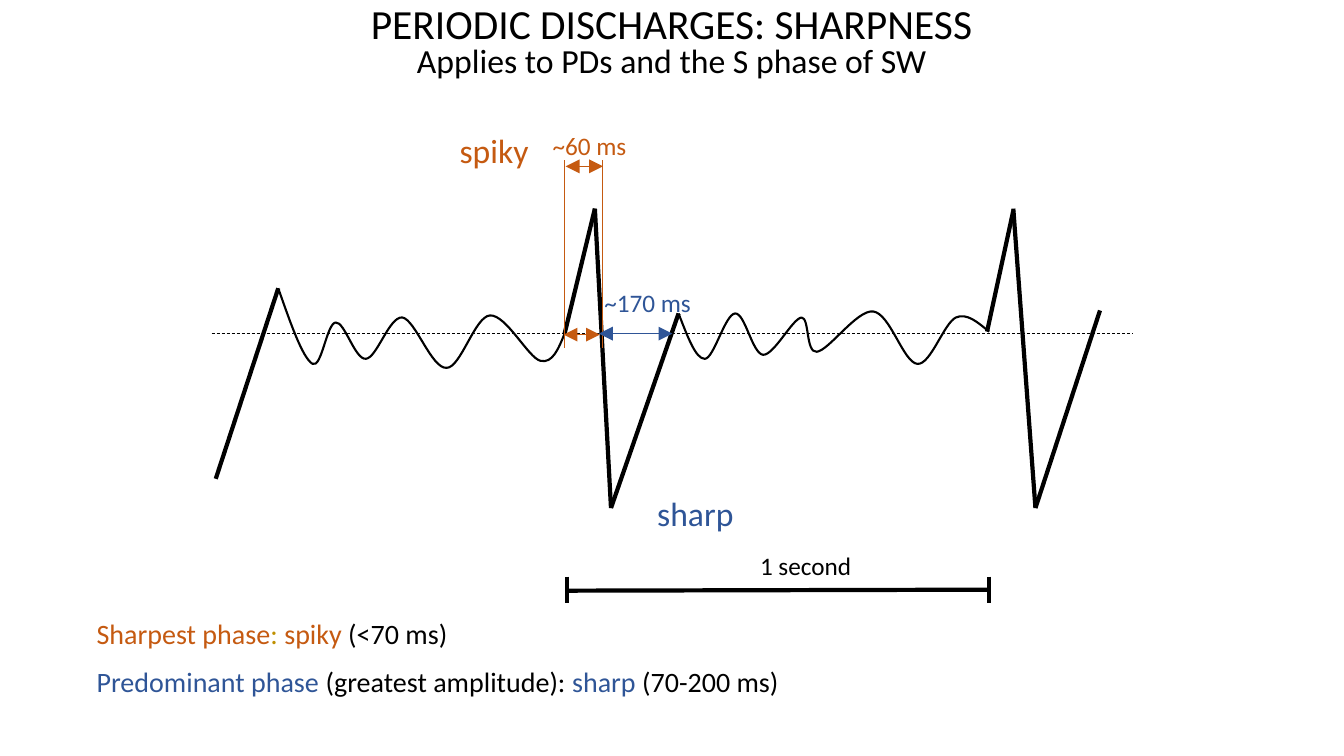
from lxml import etree
from pptx import Presentation
from pptx import util as u
from pptx.dml.color import RGBColor
from pptx.enum import dml, text
from pptx.enum.shapes import MSO_CONNECTOR
from pptx.oxml.ns import qn

HUES = {"ink": "000000", "spiky": "C55A11", "sharp": "2F5597", "gold": "BF9000"}
LEFT, MID, RIGHT = (text.PP_ALIGN.LEFT, text.PP_ALIGN.CENTER, text.PP_ALIGN.RIGHT)


class Sheet:
    """Holds the slide and its style."""

    def __init__(self, slide, font="Calibri"):
        self.shapes = slide.shapes
        self.font = font

    def hue(self, name):
        return RGBColor.from_string(HUES[name])

    def box(self, x, y, w, h, paras, align=LEFT, anchor=text.MSO_ANCHOR.TOP,
            lead=None, gap=0):
        """Each paragraph is (size, [(words, hue), ...])."""
        frame = self.shapes.add_textbox(*map(u.Inches, (x, y, w, h))).text_frame
        frame.word_wrap = True
        frame.vertical_anchor = anchor
        for i, (size, runs) in enumerate(paras):
            para = frame.add_paragraph() if i else frame.paragraphs[0]
            para.alignment = align
            if lead:
                para.line_spacing = lead
            if i and gap:
                para.space_before = u.Pt(gap)
            para.font.name, para.font.size = self.font, u.Pt(size)
            for words, hue in runs:
                run = para.add_run()
                run.text = words
                run.font.color.rgb = self.hue(hue)

    def label(self, x, y, words, size=18, hue="ink", align=RIGHT):
        self.box(x, y, 1.11, size / 60 + 0.1, [(size, [(words, hue)])], align)

    def line(self, x1, y1, x2, y2, hue="ink", width=3, dash=False, arrows=False):
        link = self.shapes.add_connector(
            MSO_CONNECTOR.STRAIGHT, *map(u.Inches, (x1, y1, x2, y2)))
        link.line.color.rgb = self.hue(hue)
        link.line.width = u.Pt(width)
        if dash:
            link.line.dash_style = dml.MSO_LINE.DASH
        if arrows:
            for end in ("a:headEnd", "a:tailEnd"):
                etree.SubElement(link.line._get_or_add_ln(), qn(end),
                                 type="triangle", w="lg", len="lg")
        etree.SubElement(link._element.spPr, qn("a:effectLst"))

    def wave(self, start, points):
        """Draw a curve: every three points are two controls and an end."""
        pen = self.shapes.build_freeform(
            *(round(v * 100) for v in start), scale=u.Inches(0.01))
        pen.add_line_segments(
            [(round(x * 100), round(y * 100)) for x, y in points], close=False)
        curve = pen.convert_to_shape()
        legs = curve._element.xpath(".//a:lnTo")
        for i in range(0, len(legs), 3):
            bend = etree.Element(qn("a:cubicBezTo"))
            legs[i].addprevious(bend)
            for leg in legs[i:i + 3]:
                bend.append(leg[0])
                leg.getparent().remove(leg)
        curve.fill.background()
        curve.line.color.rgb = self.hue("ink")
        curve.line.width = u.Pt(1.5)
        curve.shadow.inherit = False


def main():
    deck = Presentation()
    deck.slide_width, deck.slide_height = u.Inches(13.33), u.Inches(7.5)
    sheet = Sheet(deck.slides.add_slide(deck.slide_layouts[6]))

    sheet.box(0, 0, 13.33, 0.87, [
        (29.6, [("PERIODIC DISCHARGES: SHARPNESS", "ink")]),
        (24.1, [("Applies to PDs and the S phase of SW", "ink")]),
    ], MID, text.MSO_ANCHOR.MIDDLE, lead=0.8)

    # Baseline and discharges
    sheet.line(2.1, 3.31, 11.23, 3.31, width=0.5, dash=True)
    for ends in [(5.6, 3.31, 5.9, 2.07), (6.06, 5.04, 5.9, 2.07),
                 (6.06, 5.04, 6.73, 3.11), (9.79, 3.29, 10.05, 2.09),
                 (10.27, 5.04, 10.05, 2.07), (10.27, 5.04, 10.91, 3.08),
                 (2.14, 4.75, 2.76, 2.86)]:
        sheet.line(*ends)

    # Background activity between discharges
    sheet.wave((6.73, 3.11), [
        (6.82, 3.34), (6.9, 3.56), (6.99, 3.56),
        (7.08, 3.56), (7.19, 3.12), (7.29, 3.11),
        (7.39, 3.1), (7.46, 3.51), (7.57, 3.52),
        (7.68, 3.52), (7.86, 3.16), (7.95, 3.15),
        (8.03, 3.15), (7.99, 3.5), (8.1, 3.49),
        (8.22, 3.48), (8.5, 3.07), (8.66, 3.09),
        (8.83, 3.11), (8.96, 3.6), (9.1, 3.61),
        (9.23, 3.62), (9.36, 3.21), (9.48, 3.15),
        (9.59, 3.1), (9.7, 3.2), (9.81, 3.29)])
    sheet.wave((2.76, 2.86), [
        (2.88, 3.2), (3, 3.55), (3.1, 3.61),
        (3.19, 3.66), (3.24, 3.21), (3.33, 3.2),
        (3.42, 3.19), (3.52, 3.57), (3.63, 3.56),
        (3.74, 3.55), (3.86, 3.14), (3.99, 3.15),
        (4.12, 3.17), (4.28, 3.66), (4.43, 3.65),
        (4.57, 3.65), (4.71, 3.14), (4.86, 3.13),
        (5.02, 3.12), (5.24, 3.55), (5.36, 3.58),
        (5.48, 3.61), (5.54, 3.46), (5.6, 3.31)])

    # Phase durations
    for x in (5.6, 5.97):
        sheet.line(x, 1.59, x, 3.45, "spiky", 0.5)
    for x1, x2, y, hue in [(5.61, 5.98, 1.65, "spiky"), (5.94, 6.67, 3.31, "sharp"),
                           (5.59, 5.95, 3.32, "spiky")]:
        sheet.line(x1, y, x2, y, hue, 0.5, arrows=True)
    sheet.label(5.2, 1.24, "~60 ms", hue="spiky")
    sheet.label(5.84, 2.8, "~170 ms", hue="sharp")
    sheet.label(4.46, 1.24, "spiky", 24, "spiky", LEFT)
    sheet.label(6.42, 4.84, "sharp", 24, "sharp", LEFT)

    # Time scale
    sheet.line(5.62, 5.86, 9.81, 5.85)
    for x in (5.62, 9.81):
        sheet.line(x, 5.72, x, 5.98)
    sheet.label(7.43, 5.41, "1 second")

    sheet.box(0.86, 6.07, 8.67, 0.94, [
        (20, [("Sharpest phase", "spiky"), (": ", "gold"), ("spiky ", "spiky"),
              ("(<70 ms)", "ink")]),
        (20, [("Predominant phase ", "sharp"), ("(greatest amplitude): ", "ink"),
              ("sharp ", "sharp"), ("(70-200 ms)", "ink")]),
    ], gap=10)
    deck.save("out.pptx")


if __name__ == "__main__":
    main()
